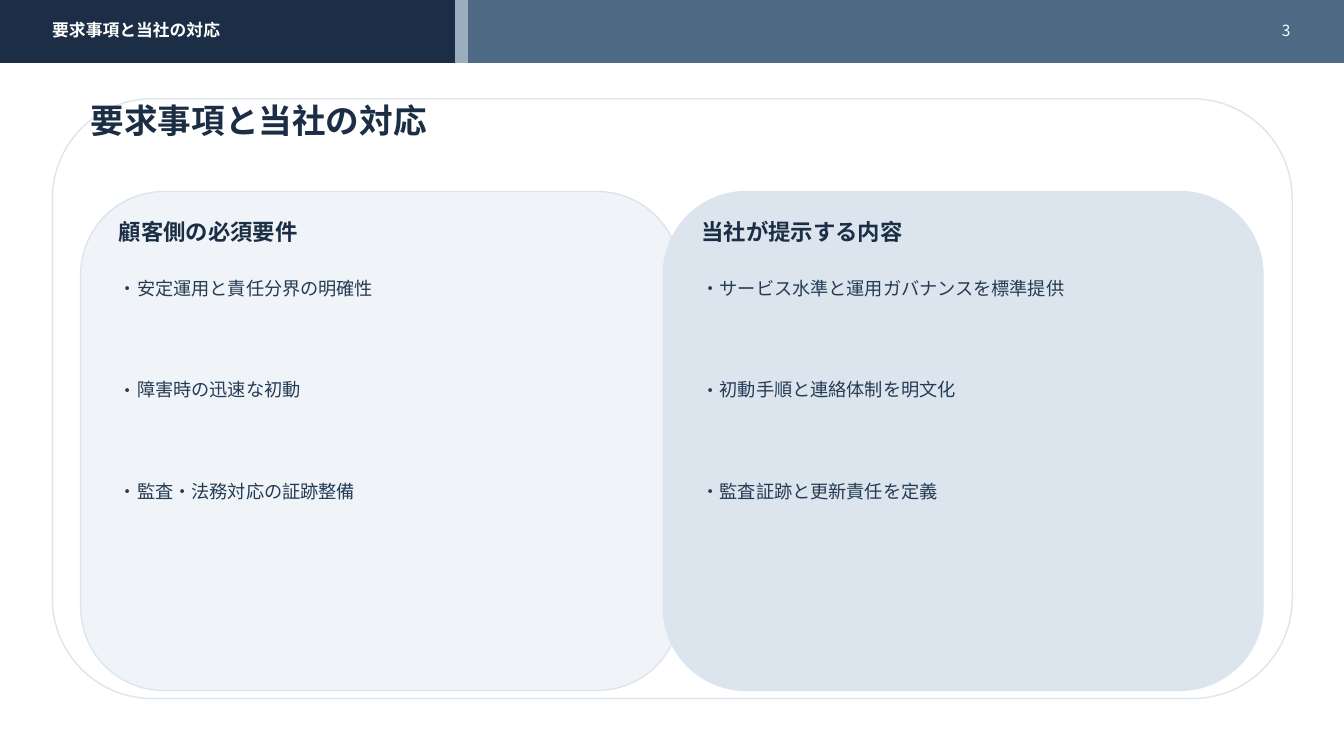
from lxml.etree import SubElement
from pptx import Presentation
from pptx.dml.color import RGBColor
from pptx.enum.shapes import MSO_SHAPE
from pptx.enum.text import MSO_ANCHOR, MSO_AUTO_SIZE, PP_ALIGN
from pptx.oxml.ns import qn
from pptx.util import Pt

TITLE = "要求事項と当社の対応"
PAGE = "3"
COLUMNS = [
    ("顧客側の必須要件",
     ["安定運用と責任分界の明確性", "障害時の迅速な初動", "監査・法務対応の証跡整備"]),
    ("当社が提示する内容",
     ["サービス水準と運用ガバナンスを標準提供", "初動手順と連絡体制を明文化", "監査証跡と更新責任を定義"]),
]
THEME = {
    "navy": "1B2E45", "steel": "4E6A85", "mist": "9BAEC0", "edge": "DCE5EE",
    "pale": "F0F4F8", "ink": "243B54", "white": "FFFFFF",
    "font": "Noto Sans CJK JP", "title_font": "DejaVu Sans",
    "title": 24, "head": 16, "body": 13, "band": 12, "page": 11,
}
W, H = 960, 540
BAND_H = 44.64
CARD_X, CARD_Y, CARD_W, CARD_H = 57.6, 136.8, 428.4, 356.4
CARD_STEP = 416.16
PAD = 20.16
ITEM_GAP = 56.8


def color(name):
    """Return the theme colour with this name."""
    return RGBColor.from_string(THEME[name])


def add_panel(s, kind, box, fill, line):
    """Draw a flat shape with a one-point outline."""
    sp = s.shapes.add_shape(kind, *map(Pt, box))
    sp.shadow.inherit = False
    if fill:
        sp.fill.solid()
        sp.fill.fore_color.rgb = color(fill)
    else:
        sp.fill.background()
    sp.line.color.rgb = color(line)
    sp.line.width = Pt(1)


def write(sp, box, lines, size, ink, bold=False, font="font", align=PP_ALIGN.LEFT,
          anchor=MSO_ANCHOR.MIDDLE, bullet=None, gap=0):
    """Place a text shape and fill it with formatted paragraphs."""
    sp.left, sp.top, sp.width, sp.height = map(Pt, box)
    tf = sp.text_frame
    tf.word_wrap = True
    tf.auto_size = MSO_AUTO_SIZE.NONE
    tf.vertical_anchor = anchor
    for i, text in enumerate(lines):
        p = tf.paragraphs[0] if i == 0 else tf.add_paragraph()
        p.alignment = align
        p.line_spacing = 1.0
        p.space_before = Pt(gap if i else 0)
        p.space_after = Pt(0)
        if bullet:
            pPr = p._p.get_or_add_pPr()
            pPr.set("marL", str(Pt(THEME[size])))
            pPr.set("indent", str(-Pt(THEME[size])))
            SubElement(pPr, qn("a:buFont")).set("typeface", THEME[font])
            SubElement(pPr, qn("a:buChar")).set("char", bullet)
        r = p.add_run()
        r.text = text
        r.font.size = Pt(THEME[size])
        r.font.bold = bold
        r.font.color.rgb = color(ink)
        r.font.name = THEME[font]
        SubElement(r.font._element, qn("a:ea")).set("typeface", THEME[font])


def main():
    """Build the comparison slide and save it."""
    prs = Presentation()
    prs.slide_width, prs.slide_height = Pt(W), Pt(H)
    s = prs.slides.add_slide(prs.slide_layouts[4])
    title, *parts = list(s.placeholders)

    add_panel(s, MSO_SHAPE.ROUNDED_RECTANGLE, (37.44, 70.56, 885.6, 428.4), None, "edge")
    for x, w, fill in [(0, W, "steel"), (0, 331.2, "navy"), (325.44, 8.64, "mist")]:
        add_panel(s, MSO_SHAPE.RECTANGLE, (x, 0, w, BAND_H), fill, fill)
    for i, fill in enumerate(["pale", "edge"]):
        add_panel(s, MSO_SHAPE.ROUNDED_RECTANGLE,
                  (CARD_X + i * CARD_STEP, CARD_Y, CARD_W, CARD_H), fill, "edge")

    for sp in [title, *parts]:
        s.shapes._spTree.append(sp._element)

    write(s.shapes.add_textbox(0, 0, 0, 0), (30.24, 12.24, 633.6, 18.72), [TITLE],
          "band", "white", bold=True)
    write(s.shapes.add_textbox(0, 0, 0, 0), (874.8, 12.24, 54, 18.72), [PAGE],
          "page", "white", align=PP_ALIGN.RIGHT)
    write(title, (57.6, 68.4, 820.8, 34.56), [TITLE], "title", "navy",
          bold=True, font="title_font")
    for i, (head, items) in enumerate(COLUMNS):
        x = CARD_X + PAD + i * CARD_STEP
        write(parts[2 * i], (x, 154.8, 374.4, 21.6), [head], "head", "navy", bold=True)
        write(parts[2 * i + 1], (x, 194.4, 378, 210.24), items, "body", "ink",
              anchor=MSO_ANCHOR.TOP, bullet="・", gap=ITEM_GAP)

    prs.save("out.pptx")


if __name__ == "__main__":
    main()
